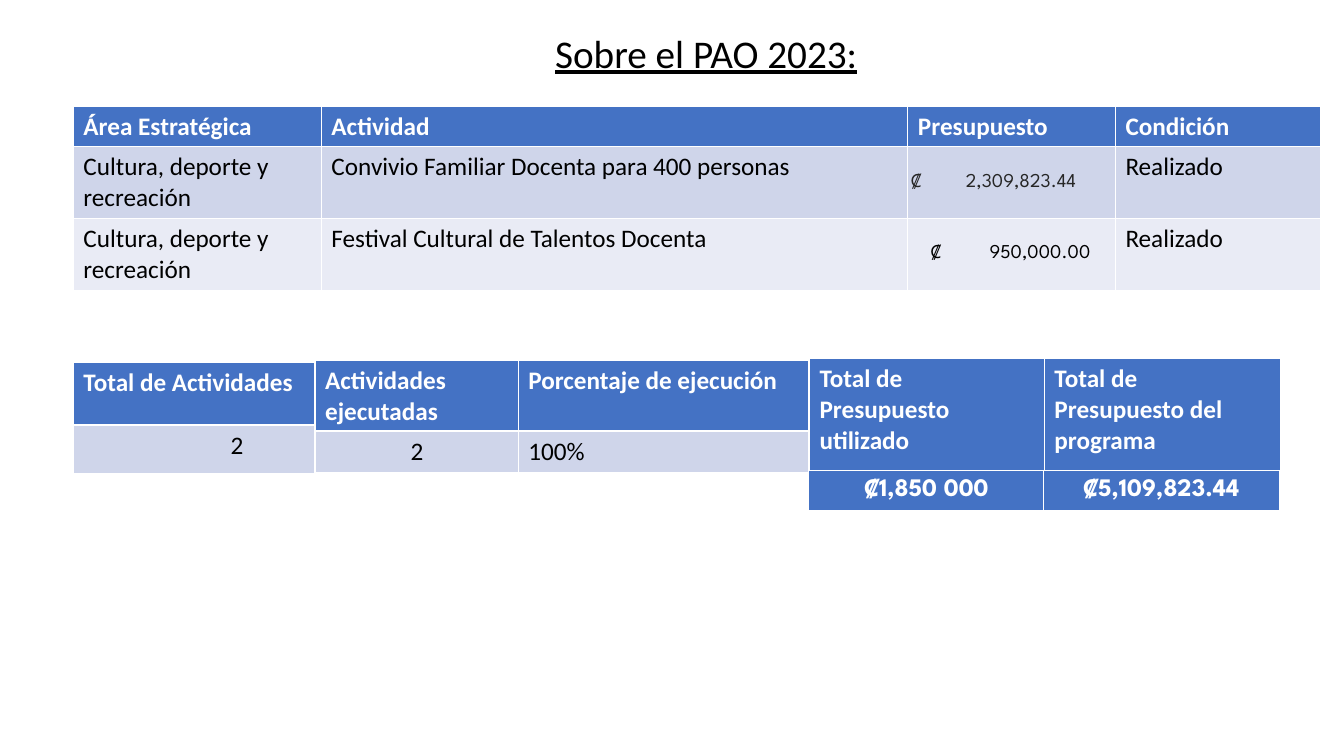
import pptx
import pptx.util
import pptx.dml.color
import pptx.enum.text
from lxml import etree
from pptx.oxml.ns import qn

Cm = pptx.util.Cm
Pt = pptx.util.Pt
PP_ALIGN = pptx.enum.text.PP_ALIGN
MSO_ANCHOR = pptx.enum.text.MSO_ANCHOR

COLORS = {
    "header": "4472C4",
    "band_dark": "CFD5EA",
    "band_light": "E9EBF5",
    "white": "FFFFFF",
    "black": "000000",
    "gray": "262626",
}
ROW_FILLS = ("header", "band_dark", "band_light")


def rgb(name):
    return pptx.dml.color.RGBColor.from_string(COLORS[name])


def style_font(p, size, color, name="Calibri", bold=False):
    p.font.size = Pt(size)
    p.font.name = name
    p.font.bold = bold
    p.font.color.rgb = rgb(color)


def add_title(s, text):
    tf = s.shapes.add_textbox(Cm(13.74), Cm(0.61), Cm(8.26), Cm(1.45)).text_frame
    tf.word_wrap = True
    p = tf.paragraphs[0]
    p.text = text
    style_font(p, 28, "black")
    p.font.underline = True


def add_grid(s, left, top, widths, heights, rows):
    frame = s.shapes.add_table(len(rows), len(widths), Cm(left), Cm(top),
                               Cm(sum(widths)), Cm(sum(heights)))
    table = frame.table
    for column, width in zip(table.columns, widths):
        column.width = Cm(width)
    for i, (height, texts) in enumerate(zip(heights, rows)):
        table.rows[i].height = Cm(height)
        for j, text in enumerate(texts):
            cell = table.cell(i, j)
            cell.fill.solid()
            cell.fill.fore_color.rgb = rgb(ROW_FILLS[i])
            p = cell.text_frame.paragraphs[0]
            p.text = text
            if "₡" not in text:
                style_font(p, 18, "black" if i else "white", bold=i == 0)
    return table


def center_vertically(cell, left=0):
    cell.vertical_anchor = MSO_ANCHOR.MIDDLE
    cell.margin_left = Cm(left)
    cell.margin_right = cell.margin_top = cell.margin_bottom = 0


def style_budget(cell, left, tab, color):
    center_vertically(cell, left)
    p = cell.text_frame.paragraphs[0]
    tabs = etree.SubElement(p._p.get_or_add_pPr(), qn("a:tabLst"))
    etree.SubElement(tabs, qn("a:tab"), pos=str(Cm(tab)), algn="l")
    style_font(p, 14, color, "League Spartan")


def add_total(s, left, label, amount):
    add_grid(s, left, 9.04, [5.94], [2.82], [[label]])
    table = add_grid(s, left - 0.02, 11.86, [5.94], [1], [[amount]])
    cell = table.cell(0, 0)
    center_vertically(cell)
    p = cell.text_frame.paragraphs[0]
    p.alignment = PP_ALIGN.CENTER
    style_font(p, 18, "white", "League Spartan", True)


def main():
    prs = pptx.Presentation()
    prs.slide_width, prs.slide_height = Cm(33.87), Cm(19.05)
    s = prs.slides.add_slide(prs.slide_layouts[6])

    activities = add_grid(s, 1.85, 2.67, [6.25, 14.78, 5.23, 5.16], [1.03, 1.8, 1.8], [
        ["Área Estratégica", "Actividad", "Presupuesto", "Condición"],
        ["Cultura, deporte y recreación", "Convivio Familiar Docenta para 400 personas",
         "₡\t2,309,823.44", "Realizado"],
        ["Cultura, deporte y recreación", "Festival Cultural de Talentos Docenta",
         "₡\t950,000.00", "Realizado"],
    ])
    style_budget(activities.cell(1, 2), 0.08, 1.38, "gray")
    style_budget(activities.cell(2, 2), 0.58, 1.48, "black")

    add_title(s, "Sobre el PAO 2023:")

    executed = add_grid(s, 7.94, 9.08, [5.12, 7.31], [1.78, 1.04], [
        ["Actividades ejecutadas", "Porcentaje de ejecución"],
        ["2", "100%"],
    ])
    executed.cell(1, 0).margin_left = Cm(2.41)

    total = add_grid(s, 1.85, 9.13, [6.08], [1.58, 1.22], [["Total de Actividades"], ["2"]])
    total.cell(1, 0).margin_left = Cm(3.96)

    add_total(s, 20.4, "Total de Presupuesto utilizado", "₡1,850 000")
    add_total(s, 26.32, "Total de Presupuesto del programa", "₡5,109,823.44")

    prs.save("out.pptx")


if __name__ == "__main__":
    main()
